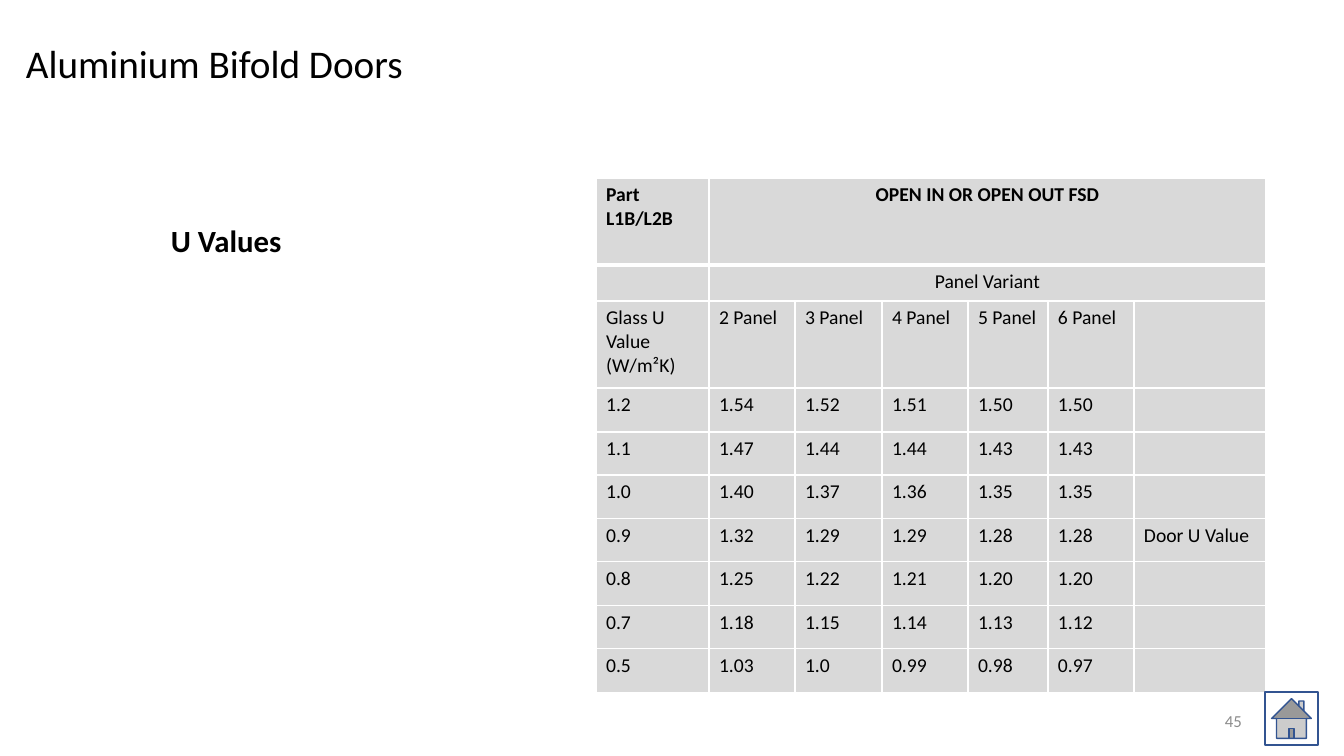
from lxml import etree
from pptx import Presentation
from pptx import util as u
from pptx.dml.color import RGBColor
from pptx.enum import shapes, text
from pptx.oxml.ns import qn

SCALE = 914400 / 100.8  # EMU in one px
COLORS = {"black": "000000", "white": "FFFFFF", "cell": "D9D9D9",
          "number": "8C8C8C", "button_line": "325491"}
LEFT, CENTER, RIGHT = text.PP_ALIGN.LEFT, text.PP_ALIGN.CENTER, text.PP_ALIGN.RIGHT


def px(value):
    return u.Emu(round(value * SCALE))


def color(name):
    return RGBColor.from_string(COLORS[name])


class SlideBuilder:
    font = "Calibri"

    def __init__(self, presentation):
        self.slide = presentation.slides.add_slide(presentation.slide_layouts[6])

    def add_words(self, frame, words, size, bold=False, align=LEFT, ink="black"):
        paragraph = frame.paragraphs[0]
        paragraph.alignment = align
        if not words:  # keeps an empty line at the text size
            etree.SubElement(paragraph._p, qn("a:endParaRPr"), sz=str(size * 100))
            return
        run = paragraph.add_run()
        run.text = words
        run.font.name, run.font.size, run.font.bold = self.font, u.Pt(size), bold
        run.font.color.rgb = color(ink)

    def text_box(self, box, words, size, wrap=False, anchor=text.MSO_ANCHOR.TOP, **style):
        frame = self.slide.shapes.add_textbox(*map(px, box)).text_frame
        frame.word_wrap = wrap
        frame.auto_size = text.MSO_AUTO_SIZE.NONE if wrap else text.MSO_AUTO_SIZE.SHAPE_TO_FIT_TEXT
        frame.vertical_anchor = anchor
        self.add_words(frame, words, size, **style)

    def shape(self, kind, box, fill, line):
        shape = self.slide.shapes.add_shape(kind, *map(px, box))
        shape.shadow.inherit = False
        shape.fill.solid()
        shape.fill.fore_color.rgb = color(fill)
        shape.line.color.rgb = color(line)
        shape.line.width = u.Pt(1)

    def borders(self, cell, top, bottom):
        properties = cell._tc.get_or_add_tcPr()
        sides = {"lnL": 1, "lnR": 1, "lnT": top, "lnB": bottom}
        for index, (side, width) in enumerate(sides.items()):
            line = etree.Element(qn("a:" + side), w=str(u.Pt(width)))
            fill = etree.SubElement(line, qn("a:solidFill"))
            etree.SubElement(fill, qn("a:srgbClr"), val=COLORS["white"])
            properties.insert(index, line)

    def table(self, left, top, widths, heights, rows, size):
        box = (left, top, sum(widths), sum(heights))
        table = self.slide.shapes.add_table(len(rows), len(widths), *map(px, box)).table
        table.horz_banding = False
        for column, width in zip(table.columns, widths):
            column.width = px(width)
        for r, (words, height) in enumerate(zip(rows, heights)):
            table.rows[r].height = px(height)
            heading = len(words) == 2  # second cell spans the remaining columns
            if heading:
                table.cell(r, 1).merge(table.cell(r, len(widths) - 1))
            for c in range(len(widths)):
                cell = table.cell(r, c)
                cell.fill.solid()
                cell.fill.fore_color.rgb = color("cell")
                self.borders(cell, 3 if r == 1 else 1, 3 if r == 0 else 1)
                self.add_words(cell.text_frame, words[c] if c < len(words) else "", size,
                               bold=r == 0, align=CENTER if heading and c else LEFT)


# Table content: glass U value, then door U values for 2 to 6 panels
U_VALUES = """
1.2 1.54 1.52 1.51 1.50 1.50
1.1 1.47 1.44 1.44 1.43 1.43
1.0 1.40 1.37 1.36 1.35 1.35
0.9 1.32 1.29 1.29 1.28 1.28
0.8 1.25 1.22 1.21 1.20 1.20
0.7 1.18 1.15 1.14 1.13 1.12
0.5 1.03 1.0 0.99 0.98 0.97
"""


def main():
    presentation = Presentation()
    presentation.slide_width, presentation.slide_height = px(1344), px(756)
    builder = SlideBuilder(presentation)

    # Slide number
    builder.text_box((950, 701, 302, 40), "45", 12, wrap=True,
                     anchor=text.MSO_ANCHOR.MIDDLE, align=RIGHT, ink="number")

    # U value table
    values = [line.split() for line in U_VALUES.strip().splitlines()]
    rows = [["Part L1B/L2B", "OPEN IN OR OPEN OUT FSD"],
            ["", "Panel Variant"],
            ["Glass U Value (W/m²K)"] + [f"{count} Panel" for count in range(2, 7)]]
    rows += [row + ["Door U Value" if row[0] == "0.9" else ""] for row in values]
    builder.table(596, 178, [113, 86, 87, 86, 80, 86, 132],
                  [87, 36, 87] + [44, 43] * 3 + [44], rows, 14)

    # Headings
    builder.text_box((161, 217, 132, 47), "U Values", 22, bold=True)
    builder.text_box((16, 34, 410, 57), "Aluminium Bifold Doors", 28)

    # Home button
    builder.shape(shapes.MSO_SHAPE.ACTION_BUTTON_HOME, (1265, 692, 53, 53),
                  "white", "button_line")
    presentation.save("out.pptx")


if __name__ == "__main__":
    main()
